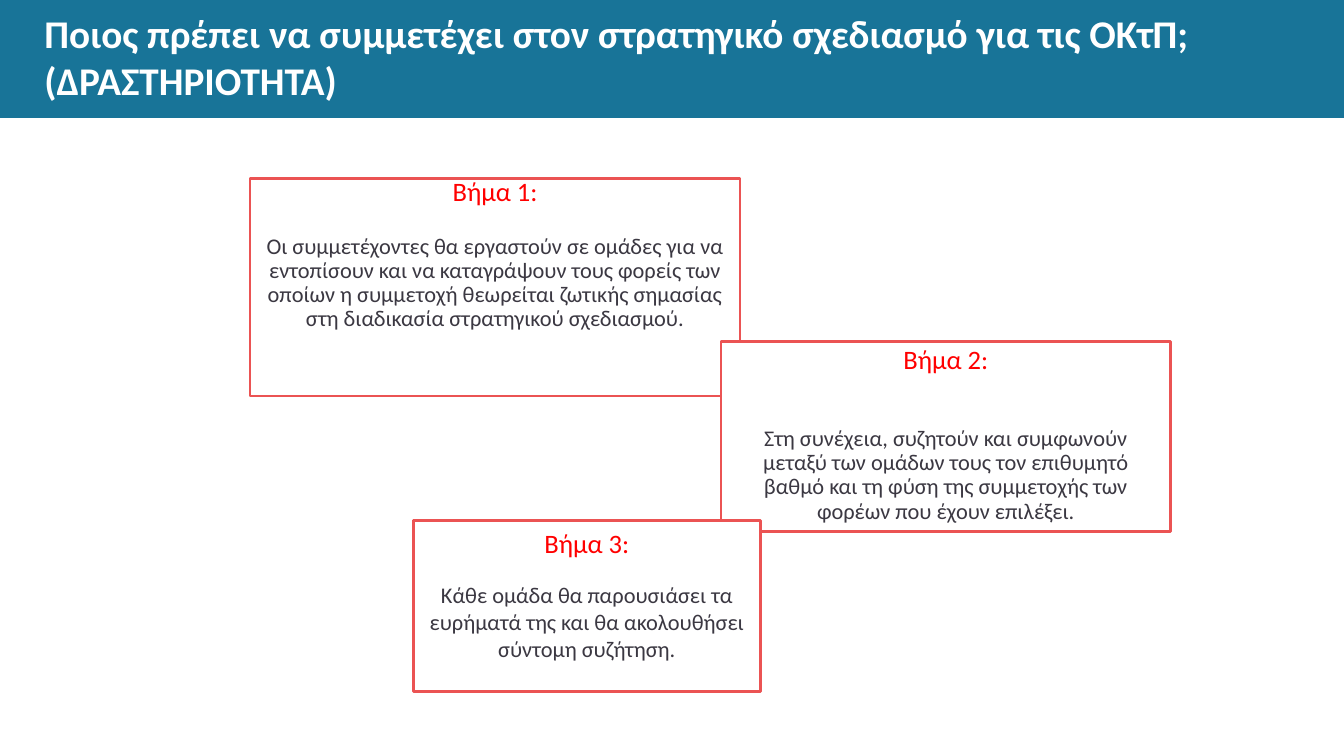
from pptx import Presentation, util as u
from pptx.dml.color import RGBColor
from pptx.enum import shapes, text


class Deck:
    """Holds the style and the current slide; lengths are percent of the slide."""
    font = "Calibri"
    colors = {"band": "187498", "frame": "EB5353", "white": "FFFFFF",
              "step": "FF0000", "body": "3B3842"}

    def __init__(self):
        self.prs = Presentation()
        self.prs.slide_width = u.Inches(13.33)
        self.prs.slide_height = u.Inches(7.5)
        self.s = self.prs.slides.add_slide(self.prs.slide_layouts[6])

    def color(self, name):
        return RGBColor.from_string(self.colors[name])

    def place(self, x, y, w, h):
        sw, sh = self.prs.slide_width, self.prs.slide_height
        return [int(v * side / 100) for v, side in ((x, sw), (y, sh), (w, sw), (h, sh))]

    def box(self, area, fill, line=None):
        sp = self.s.shapes.add_shape(shapes.MSO_SHAPE.RECTANGLE, *self.place(*area))
        sp.shadow.inherit = False
        sp.fill.solid()
        sp.fill.fore_color.rgb = self.color(fill)
        if line:
            sp.line.color.rgb = self.color(line)
            sp.line.width = u.Pt(2)
        else:
            sp.line.fill.background()
        return sp

    def frame(self, sp, anchor, side=0, top=0):
        tf = sp.text_frame
        tf.word_wrap = True
        tf.vertical_anchor = anchor
        tf.margin_left = tf.margin_right = u.Inches(side)
        tf.margin_top, tf.margin_bottom = u.Inches(top), 0
        return tf

    def set_text(self, p, words, size, color, bold=False):
        p.text = words
        for r in p.runs:
            r.font.name = self.font
            r.font.size = u.Pt(size)
            r.font.bold = bold
            r.font.color.rgb = self.color(color)

    def title(self, area, words):
        sp = self.s.shapes.add_textbox(*self.place(*area))
        tf = self.frame(sp, text.MSO_ANCHOR.MIDDLE)
        self.set_text(tf.paragraphs[0], words, 28, "white", bold=True)

    def step(self, area, heading, body, side, top, gap, spacing):
        sp = self.box(area, "white", "frame")
        tf = self.frame(sp, text.MSO_ANCHOR.TOP, side, top)
        self.set_text(tf.paragraphs[0], heading, 19, "step")
        self.set_text(tf.add_paragraph(), body, 16, "body")
        tf.paragraphs[1].space_before = u.Pt(gap)
        for p in tf.paragraphs:
            p.alignment = text.PP_ALIGN.CENTER
            p.line_spacing = spacing


# Area, heading, body, side inset, top inset, gap under heading, line spacing
STEPS = [
    ((18.6, 23.6, 36.46, 28.8), "Βήμα 1:",
     "Οι συμμετέχοντες θα εργαστούν σε ομάδες για να εντοπίσουν και να "
     "καταγράψουν τους φορείς των οποίων η συμμετοχή θεωρείται ζωτικής "
     "σημασίας στη διαδικασία στρατηγικού σχεδιασμού.", 0, 0, 20, 0.9),
    ((53.64, 45.2, 33.46, 25.07), "Βήμα 2:",
     "Στη συνέχεια, συζητούν και συμφωνούν μεταξύ των ομάδων τους τον "
     "επιθυμητό βαθμό και τη φύση της συμμετοχής των φορέων που έχουν "
     "επιλέξει.", 0.1, 0.05, 37, 0.9),
    ((30.76, 68.8, 25.81, 22.67), "Βήμα 3:",
     "Κάθε ομάδα θα παρουσιάσει τα ευρήματά της και θα ακολουθήσει σύντομη "
     "συζήτηση.", 0.1, 0.07, 16, 1.0),
]


def main():
    deck = Deck()

    # Title band
    deck.box((0, 0, 100, 15.6), "band")
    deck.title((3.3, 2.53, 93.47, 9.87),
               "Ποιος πρέπει να συμμετέχει στον στρατηγικό σχεδιασμό για τις ΟΚτΠ; "
               "(ΔΡΑΣΤΗΡΙΟΤΗΤΑ)")

    # Overlapping steps, back to front
    for step in STEPS:
        deck.step(*step)

    deck.prs.save("out.pptx")


if __name__ == "__main__":
    main()
